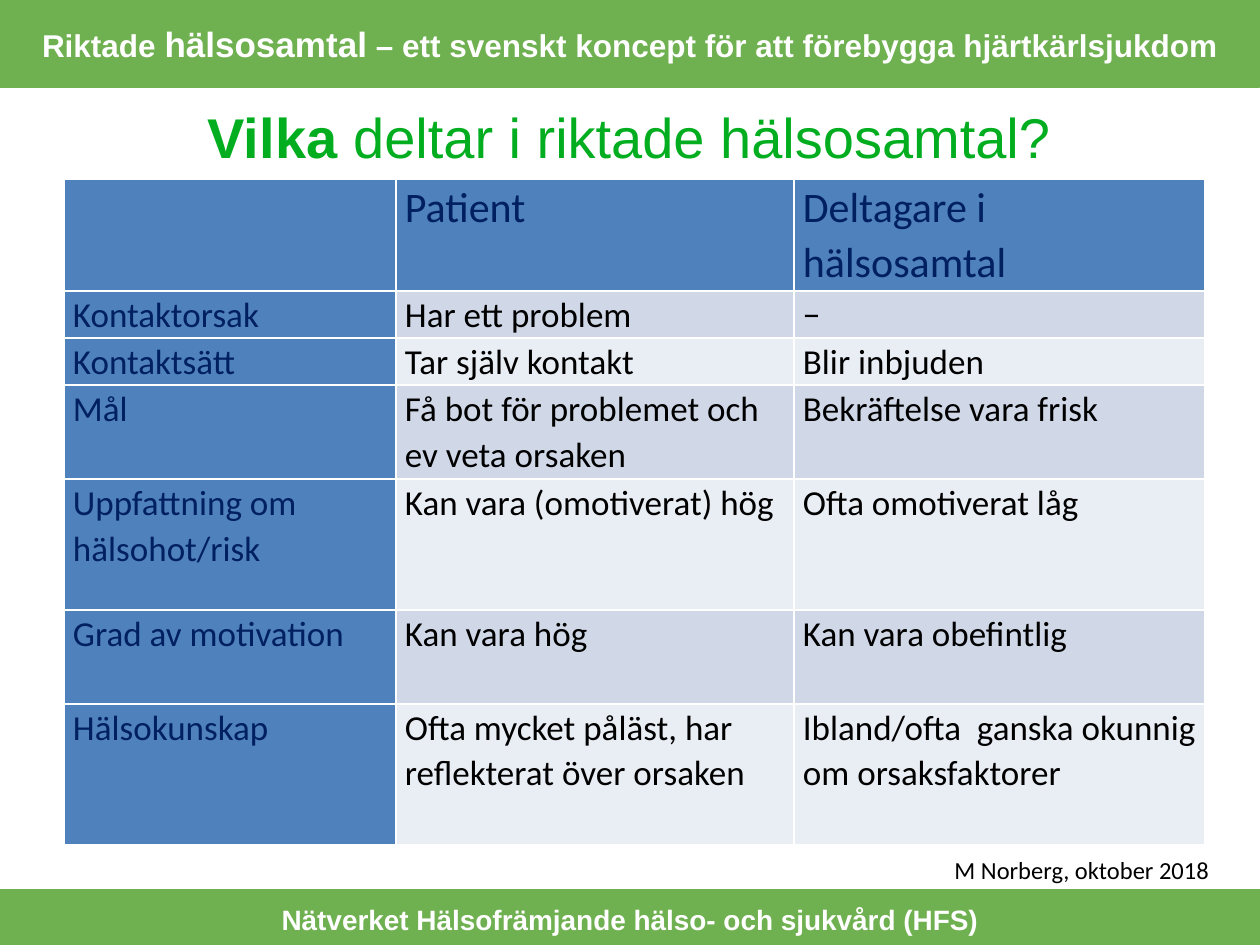
from dataclasses import dataclass

from lxml.etree import SubElement
from pptx import Presentation
from pptx.dml.color import RGBColor
from pptx.enum.shapes import MSO_SHAPE
from pptx.enum.text import MSO_AUTO_SIZE, PP_ALIGN
from pptx.oxml.ns import qn
from pptx.util import Emu, Pt


@dataclass(frozen=True)
class Theme:
    white: str = "FFFFFF"
    black: str = "000000"
    band: str = "6FB050"
    title: str = "02AE1F"
    navy: str = "002060"
    header: str = "4F81BD"
    stripes: tuple = ("D0D8E8", "E9EDF4")
    heading_font: str = "Arial"
    body_font: str = "Calibri"
    title_size: int = 32
    head_size: int = 24
    body_size: int = 20
    banner_size: int = 18
    footer_size: int = 16
    credit_size: int = 14


T = Theme()

COLUMNS = (332, 398, 411)
ROW_HEIGHTS = (112, 47, 47, 94, 131, 94, 141)
ROWS = (
    ("", "Patient", "Deltagare i hälsosamtal"),
    ("Kontaktorsak", "Har ett problem", "−"),
    ("Kontaktsätt", "Tar själv kontakt", "Blir inbjuden"),
    ("Mål", "Få bot för problemet och ev veta orsaken", "Bekräftelse vara frisk"),
    ("Uppfattning om hälsohot/risk", "Kan vara (omotiverat) hög", "Ofta omotiverat låg"),
    ("Grad av motivation", "Kan vara hög", "Kan vara obefintlig"),
    ("Hälsokunskap", "Ofta mycket påläst, har reflekterat över orsaken",
     "Ibland/ofta  ganska okunnig om orsaksfaktorer"),
)


def px(n):
    return Emu(round(n * 914400 / 126))


def rgb(color):
    return RGBColor.from_string(color)


def style_run(r, font, size, color, bold=False):
    r.font.name = font
    r.font.size = Pt(size)
    r.font.bold = bold
    r.font.color.rgb = rgb(color)


def add_band(s, x, y, w, h):
    sp = s.shapes.add_shape(MSO_SHAPE.RECTANGLE, px(x), px(y), px(w), px(h))
    sp.shadow.inherit = False
    sp.fill.solid()
    sp.fill.fore_color.rgb = rgb(T.band)
    sp.line.color.rgb = rgb(T.band)
    sp.line.width = Pt(2)


def add_text(s, x, y, w, h, runs, font, color, align=PP_ALIGN.CENTER, wrap=True):
    tf = s.shapes.add_textbox(px(x), px(y), px(w), px(h)).text_frame
    tf.word_wrap = wrap
    tf.auto_size = MSO_AUTO_SIZE.NONE if wrap else MSO_AUTO_SIZE.SHAPE_TO_FIT_TEXT
    p = tf.paragraphs[0]
    p.alignment = align
    for text, size, bold in runs:
        r = p.add_run()
        r.text = text
        style_run(r, font, size, color, bold)


def set_borders(cell):
    tcPr = cell._tc.get_or_add_tcPr()
    for i, side in enumerate(("a:lnL", "a:lnR", "a:lnT", "a:lnB")):
        ln = SubElement(tcPr, qn(side), w=str(Pt(1)))
        SubElement(SubElement(ln, qn("a:solidFill")), qn("a:srgbClr"), val=T.white)
        tcPr.remove(ln)
        tcPr.insert(i, ln)


def fill_cell(cell, text, fill, size, color):
    cell.fill.solid()
    cell.fill.fore_color.rgb = rgb(fill)
    set_borders(cell)
    cell.margin_left = cell.margin_right = px(9)
    cell.margin_top = cell.margin_bottom = 0
    cell.text_frame.text = text
    p = cell.text_frame.paragraphs[0]
    p.line_spacing = 1.07
    for r in p.runs:
        style_run(r, T.body_font, size, color)


def add_comparison(s, x, y):
    frame = s.shapes.add_table(len(ROWS), len(COLUMNS), px(x), px(y),
                               px(sum(COLUMNS)), px(sum(ROW_HEIGHTS)))
    table = frame.table
    for column, w in zip(table.columns, COLUMNS):
        column.width = px(w)
    for row, h in zip(table.rows, ROW_HEIGHTS):
        row.height = px(h)
    for i, texts in enumerate(ROWS):
        for j, text in enumerate(texts):
            heading = i == 0 or j == 0
            fill_cell(table.cell(i, j), text,
                      T.header if heading else T.stripes[(i - 1) % 2],
                      T.head_size if i == 0 else T.body_size,
                      T.navy if heading else T.black)


def main():
    prs = Presentation()
    prs.slide_width, prs.slide_height = px(1260), px(945)
    s = prs.slides.add_slide(prs.slide_layouts[6])
    add_band(s, 0, 891, 1260, 55)
    add_text(s, 134, 896, 992, 65,
             [("Nätverket Hälsofrämjande hälso- och sjukvård (HFS)", T.footer_size, True)],
             T.heading_font, T.white)
    add_band(s, -1, 1, 1260, 85)
    add_text(s, 15, 16, 1230, 65,
             [("Riktade ", T.banner_size, True),
              ("hälsosamtal", T.body_size, True),
              (" – ett svenskt koncept för att förebygga hjärtkärlsjukdom",
               T.banner_size, True)],
             T.heading_font, T.white)
    add_text(s, 64, 96, 1131, 81,
             [("Vilka ", T.title_size, True),
              ("deltar i riktade hälsosamtal?", T.title_size, False)],
             T.heading_font, T.title)
    add_comparison(s, 64, 179)
    add_text(s, 942, 849, 282, 43,
             [("M Norberg, oktober 2018", T.credit_size, False)],
             T.body_font, T.black, PP_ALIGN.LEFT, wrap=False)
    prs.save("out.pptx")


if __name__ == "__main__":
    main()
